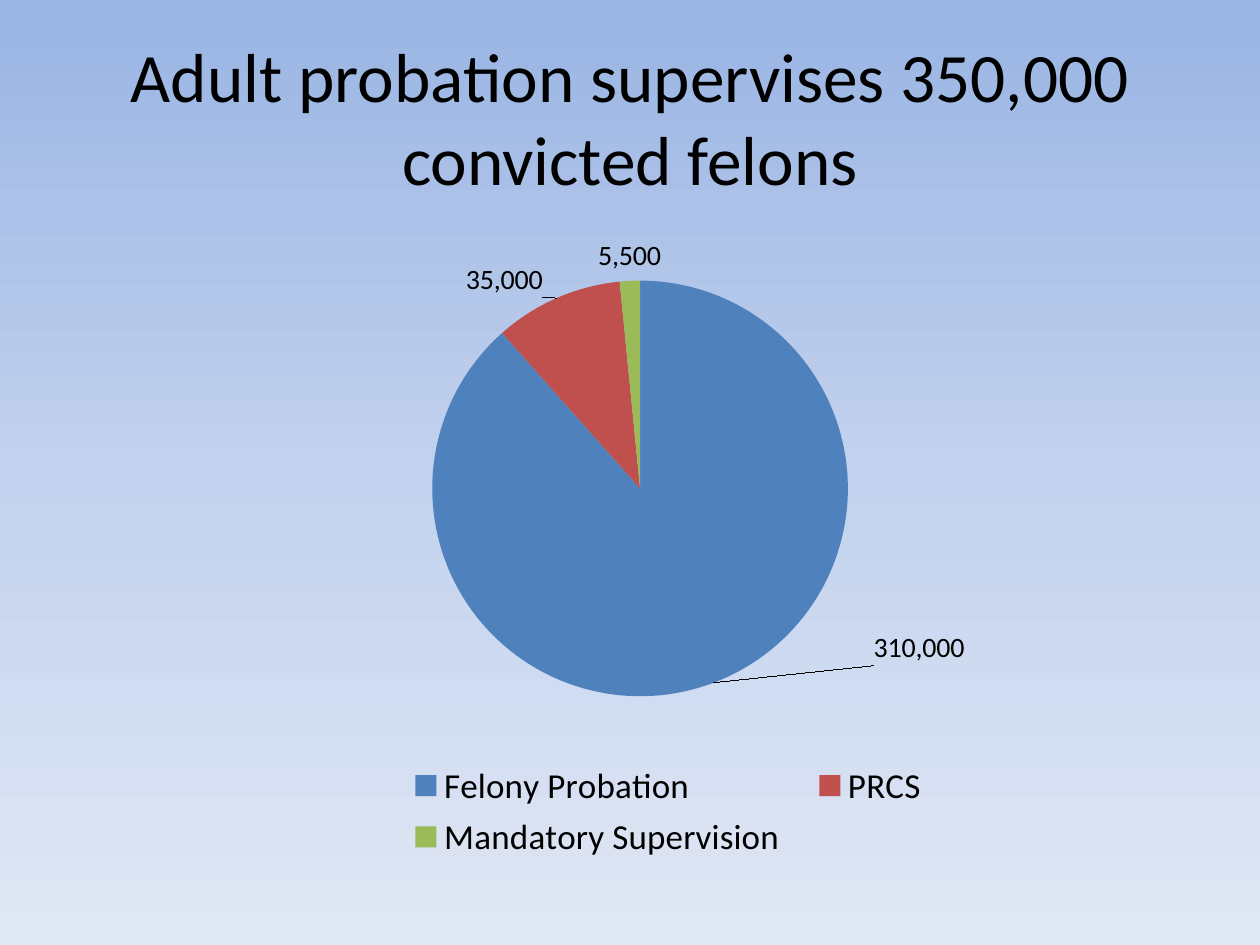
from copy import deepcopy

from lxml import etree
from pptx import Presentation
from pptx.chart.data import CategoryChartData
from pptx.dml.color import RGBColor
from pptx.enum.chart import XL_CHART_TYPE, XL_LABEL_POSITION, XL_LEGEND_POSITION
from pptx.enum.text import MSO_ANCHOR, PP_ALIGN
from pptx.oxml.ns import qn
from pptx.util import Pt

PIE = XL_CHART_TYPE.PIE
BOTTOM = XL_LEGEND_POSITION.BOTTOM
OUTSIDE_END = XL_LABEL_POSITION.OUTSIDE_END
MIDDLE = MSO_ANCHOR.MIDDLE
CENTER = PP_ALIGN.CENTER

BLACK = RGBColor(0x00, 0x00, 0x00)
BLUE = RGBColor(0x4F, 0x81, 0xBD)
RED = RGBColor(0xC0, 0x50, 0x4D)
GREEN = RGBColor(0x9B, 0xBB, 0x59)
SKY_TOP = RGBColor(0x9A, 0xB5, 0xE4)
SKY_MIDDLE = RGBColor(0xC2, 0xD1, 0xED)
SKY_BOTTOM = RGBColor(0xE1, 0xE8, 0xF5)

BLANK_LAYOUT = 6
NUMBER_FORMAT = "#,##0"
SUPERVISED = [
    ("Felony Probation", 310000, BLUE),
    ("PRCS", 35000, RED),
    ("Mandatory Supervision", 5500, GREEN),
]
PLOT_LAYOUT = {"layoutTarget": "inner", "xMode": "edge", "yMode": "edge",
               "x": 0.31, "y": 0.09, "w": 0.37, "h": 0.65}
LEGEND_LAYOUT = {"xMode": "edge", "yMode": "edge",
                 "x": 0.27, "y": 0.83, "w": 0.5, "h": 0.17}
LABEL_OFFSETS = {0: {"x": 0.14, "y": -0.09}, 1: {"x": -0.01, "y": 0.01}}


class SlideBuilder:
    font_name = "Calibri"
    font_color = BLACK

    def __init__(self, slide):
        self.slide = slide

    def style_font(self, font, size):
        font.name = self.font_name
        font.size = Pt(size)
        font.color.rgb = self.font_color

    def background(self, colors):
        fill = self.slide.background.fill
        fill.gradient()
        fill.gradient_angle = 270
        stop_list = self.slide.element.find(".//" + qn("a:gsLst"))
        while len(stop_list) < len(colors):
            stop_list.append(deepcopy(stop_list[-1]))
        for index, (stop, color) in enumerate(zip(fill.gradient_stops, colors)):
            stop.color.rgb = color
            stop.position = index / (len(colors) - 1)

    def title(self, text, left, top, width, height, size):
        shape = self.slide.shapes.add_textbox(Pt(left), Pt(top), Pt(width), Pt(height))
        text_frame = shape.text_frame
        text_frame.word_wrap = True
        text_frame.vertical_anchor = MIDDLE
        text_frame.text = text
        paragraph = text_frame.paragraphs[0]
        paragraph.alignment = CENTER
        self.style_font(paragraph.runs[0].font, size)

    def manual_layout(self, parent, settings, after=None):
        for old_layout in parent.findall(qn("c:layout")):
            parent.remove(old_layout)
        layout = etree.Element(qn("c:layout"))
        manual = etree.SubElement(layout, qn("c:manualLayout"))
        for name, value in settings.items():
            etree.SubElement(manual, qn("c:" + name)).set("val", str(value))
        if after is None:
            parent.insert(0, layout)
        else:
            parent.find(qn(after)).addnext(layout)

    def pie(self, slices, left, top, width, height, label_size, legend_size):
        chart_data = CategoryChartData(number_format=NUMBER_FORMAT)
        chart_data.categories = [name for name, _, _ in slices]
        chart_data.add_series("Series 1", [value for _, value, _ in slices])
        chart = self.slide.shapes.add_chart(
            PIE, Pt(left), Pt(top), Pt(width), Pt(height), chart_data).chart
        chart.has_title = False
        self.style_font(chart.font, label_size)

        chart.has_legend = True
        chart.legend.position = BOTTOM
        chart.legend.include_in_layout = False
        self.style_font(chart.legend.font, legend_size)

        plot = chart.plots[0]
        plot.vary_by_categories = True
        series = plot.series[0]
        labels = series.data_labels
        labels.show_value = True
        labels.number_format = NUMBER_FORMAT
        labels.number_format_is_linked = False
        labels.position = OUTSIDE_END
        self.style_font(labels.font, label_size)
        for index, (_, _, color) in enumerate(slices):
            fill = series.points[index].format.fill
            fill.solid()
            fill.fore_color.rgb = color
        for index, offset in LABEL_OFFSETS.items():
            label = series.points[index].data_label
            label.position = OUTSIDE_END
            self.style_font(label.font, label_size)

        chart_space = chart.element
        self.manual_layout(chart_space.find(".//" + qn("c:plotArea")), PLOT_LAYOUT)
        self.manual_layout(chart_space.find(".//" + qn("c:legend")),
                           LEGEND_LAYOUT, "c:legendPos")
        for element in chart_space.iter(qn("c:dLbl")):
            index = int(element.find(qn("c:idx")).get("val"))
            self.manual_layout(element, LABEL_OFFSETS[index], "c:idx")


def main():
    presentation = Presentation()
    presentation.slide_width = Pt(720)
    presentation.slide_height = Pt(540)
    slide = presentation.slides.add_slide(presentation.slide_layouts[BLANK_LAYOUT])
    builder = SlideBuilder(slide)
    builder.background([SKY_TOP, SKY_MIDDLE, SKY_BOTTOM])
    builder.title("Adult probation supervises 350,000 convicted felons",
                  36, 21.6, 648, 90, 39.6)
    builder.pie(SUPERVISED, 48, 126, 642, 369, 16, 20)
    presentation.save("out.pptx")


if __name__ == "__main__":
    main()
